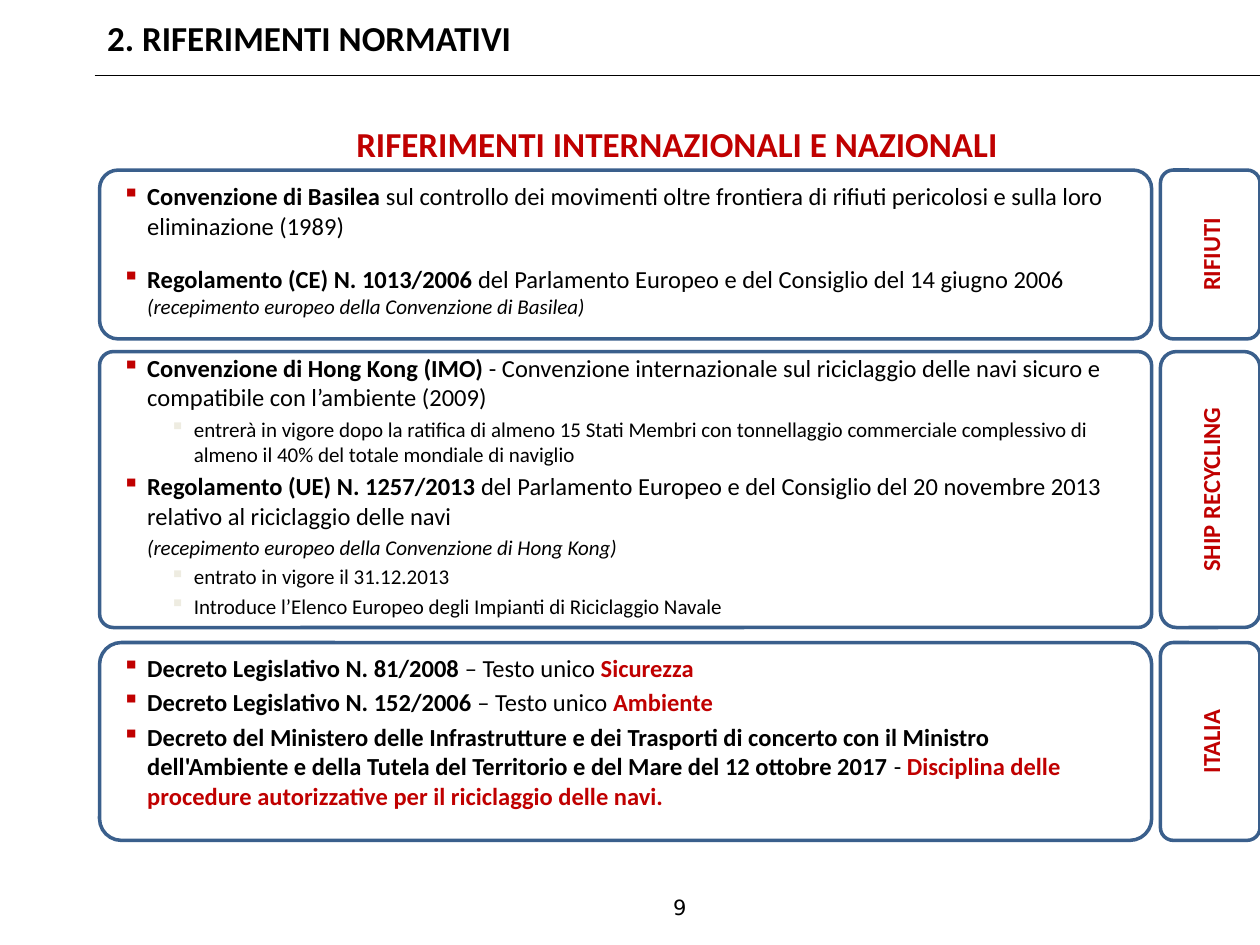
from lxml import etree
from pptx import Presentation
from pptx.dml.color import RGBColor
from pptx.enum import shapes, text
from pptx.oxml.ns import qn
from pptx.util import Inches, Pt

BLACK, RED, BLUE, PALE = "000000", "C00000", "3A5F8C", "EEECE1"
BOLD = {"bold": True}
BOLD_RED = {"bold": True, "color": RED}
PLAIN = {}
SMALL = {"size": 12}
SMALL_ITALIC = {"size": 12, "italic": True}

# label, top, height, frame corner, label corner
SECTIONS = [
    ("RIFIUTI", 1.35, 1.34, 0.11, 0.13),
    ("SHIP RECYCLING", 2.79, 2.19, 0.05, 0.16),
    ("ITALIA", 5.1, 1.57, 0.11, 0.13),
]

# style: level, left indent, first-line indent, bullet colour
STYLES = {
    "main": (0, 0.2, -0.2, RED),
    "note": (0, 0.2, 0, None),
    "sub": (1, 0.57, -0.19, PALE),
}

# style, space before in points, runs
REFERENCES = [
    ("main", 0, [
        ("Convenzione di Basilea ", BOLD),
        ("sul controllo dei movimenti oltre frontiera di rifiuti pericolosi "
         "e sulla loro eliminazione (1989)", PLAIN)]),
    ("main", 13.5, [
        ("Regolamento (CE) N. 1013/2006 ", BOLD),
        ("del Parlamento Europeo e del Consiglio del 14 giugno 2006 ", PLAIN),
        ("(recepimento europeo della Convenzione di Basilea)", SMALL_ITALIC)]),
    ("main", 19.8, [
        ("Convenzione di Hong Kong (IMO)", BOLD),
        (" - Convenzione internazionale sul riciclaggio delle navi sicuro "
         "e compatibile con l’ambiente (2009)", PLAIN)]),
    ("sub", 2.4, [
        ("entrerà in vigore dopo la ratifica di almeno 15 Stati Membri con "
         "tonnellaggio commerciale complessivo di almeno il 40% del totale "
         "mondiale di naviglio", SMALL)]),
    ("main", 2.8, [
        ("Regolamento (UE) N. 1257/2013 ", BOLD),
        ("del Parlamento Europeo e del Consiglio del 20 novembre 2013 "
         "relativo al riciclaggio delle navi", PLAIN)]),
    ("note", 2.4, [
        ("(recepimento europeo della Convenzione di Hong Kong)", SMALL_ITALIC)]),
    ("sub", 2.4, [("entrato in vigore il 31.12.2013", SMALL)]),
    ("sub", 2.4, [
        ("Introduce l’Elenco Europeo degli Impianti di Riciclaggio Navale", SMALL)]),
    ("main", 19.8, [
        ("Decreto Legislativo N. 81/2008 ", BOLD),
        ("– Testo unico ", PLAIN),
        ("Sicurezza", BOLD_RED)]),
    ("main", 2.8, [
        ("Decreto Legislativo N. 152/2006 ", BOLD),
        ("– Testo unico ", PLAIN),
        ("Ambiente", BOLD_RED)]),
    ("main", 2.8, [
        ("Decreto del Ministero delle Infrastrutture e dei Trasporti di "
         "concerto con il Ministro dell'Ambiente e della Tutela del "
         "Territorio e del Mare del 12 ottobre 2017", BOLD),
        (" - ", PLAIN),
        ("Disciplina delle procedure autorizzative per il riciclaggio "
         "delle navi.", BOLD_RED)]),
]


def rgb(color):
    return RGBColor.from_string(color)


def add_run(para, words, size=14, color=BLACK, bold=False, italic=False, name="Calibri"):
    span = para.add_run()
    span.text = words
    font = span.font
    font.name, font.size, font.bold, font.italic = name, Pt(size), bold, italic
    font.color.rgb = rgb(color)


def add_line_of_text(frame, words, align=text.PP_ALIGN.CENTER,
                     anchor=text.MSO_ANCHOR.MIDDLE, **look):
    frame.word_wrap = True
    frame.auto_size = text.MSO_AUTO_SIZE.NONE
    frame.vertical_anchor = anchor
    para = frame.paragraphs[0]
    para.alignment = align
    add_run(para, words, **look)


def add_box(page, left, top, width, height):
    return page.shapes.add_textbox(Inches(left), Inches(top), Inches(width), Inches(height))


def add_frame(page, left, top, width, height, corner):
    frame = page.shapes.add_shape(shapes.MSO_SHAPE.ROUNDED_RECTANGLE, Inches(left),
                                  Inches(top), Inches(width), Inches(height))
    frame.adjustments[0] = corner
    frame.shadow.inherit = False
    frame.fill.background()
    frame.line.color.rgb = rgb(BLUE)
    frame.line.width = Pt(2)
    return frame


def set_indent(para, left, first, bullet):
    props = para._p.get_or_add_pPr()
    props.set("marL", str(Inches(left)))
    props.set("indent", str(Inches(first)))
    if bullet:
        color = etree.SubElement(props, qn("a:buClr"))
        etree.SubElement(color, qn("a:srgbClr"), val=bullet)
        etree.SubElement(props, qn("a:buChar"), char="▪")
    else:
        etree.SubElement(props, qn("a:buNone"))


deck = Presentation()
deck.slide_width, deck.slide_height = Inches(10), Inches(7.5)
page = deck.slides.add_slide(deck.slide_layouts[5])

title = page.shapes.title
title.left, title.top, title.width, title.height = (
    Inches(0.75), Inches(0), Inches(9.25), Inches(0.6))
add_line_of_text(title.text_frame, "2. RIFERIMENTI NORMATIVI",
                 align=text.PP_ALIGN.LEFT, size=20, bold=True)

rule = page.shapes.add_connector(shapes.MSO_CONNECTOR.STRAIGHT, Inches(0.75),
                                 Inches(0.6), Inches(10), Inches(0.6))
rule.line.color.rgb = rgb(BLACK)
rule.line.width = Pt(1)
etree.SubElement(rule.element.spPr, qn("a:effectLst"))

number = add_box(page, 4.23, 7, 2.33, 0.4)
add_line_of_text(number.text_frame, "9", size=12, name="DejaVu Sans")

heading = add_box(page, 0.75, 0.92, 9.25, 0.39)
add_line_of_text(heading.text_frame, "RIFERIMENTI INTERNAZIONALI E NAZIONALI",
                 anchor=text.MSO_ANCHOR.TOP, size=20, **BOLD_RED)

body = add_box(page, 0.87, 1.39, 8.11, 4.96).text_frame
body.word_wrap = True
for index, (style, space, runs) in enumerate(REFERENCES):
    para = body.add_paragraph() if index else body.paragraphs[0]
    level, left, first, bullet = STYLES[style]
    para.level = level
    para.space_before = Pt(space)
    set_indent(para, left, first, bullet)
    for words, look in runs:
        add_run(para, words, **look)

for label, top, height, frame_corner, label_corner in SECTIONS:
    add_frame(page, 0.79, top, 8.35, height, frame_corner)
    tab = add_frame(page, 9.21, top, 0.79, height, label_corner)
    tab.element.txBody.bodyPr.set("vert", "vert270")
    add_line_of_text(tab.text_frame, label, **BOLD_RED)

deck.save("out.pptx")
